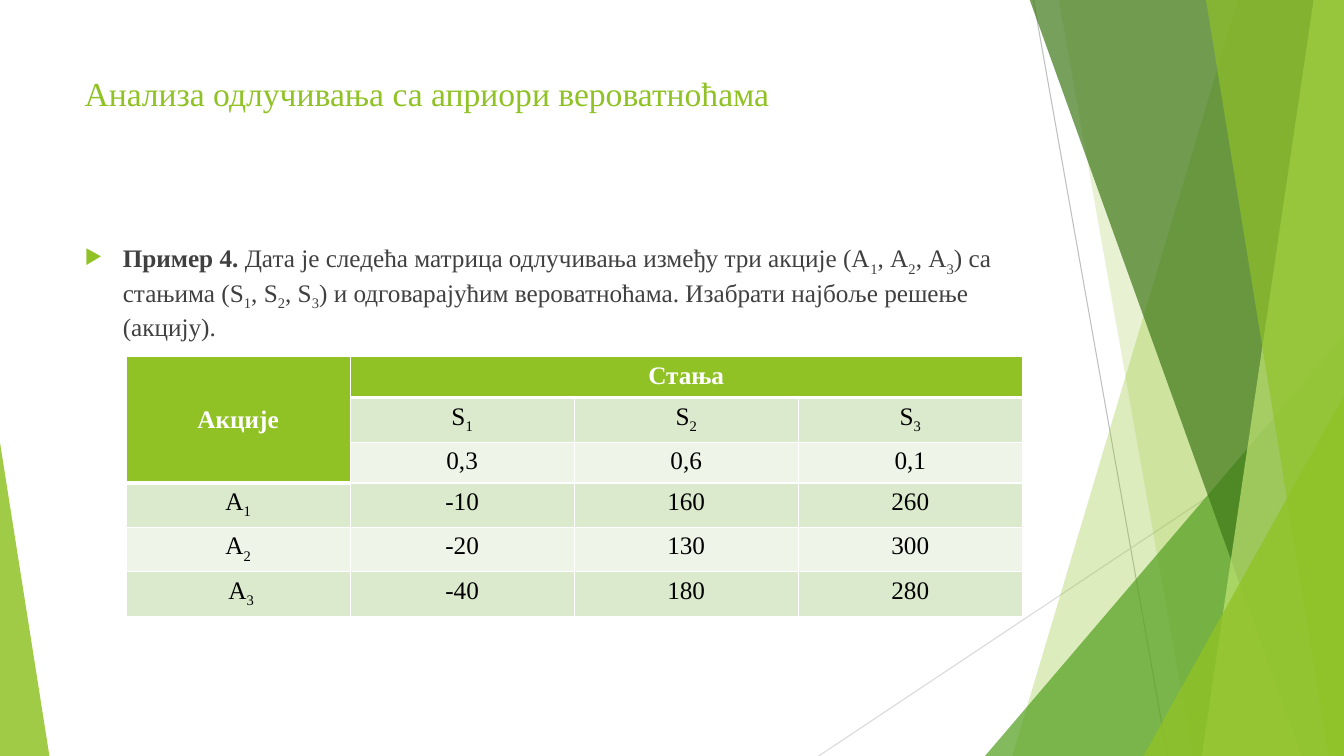
import lxml.etree
import pptx
import pptx.dml.color
import pptx.enum.shapes
import pptx.enum.text
import pptx.oxml
import pptx.oxml.ns
import pptx.util

Inches = pptx.util.Inches
Pt = pptx.util.Pt
qn = pptx.oxml.ns.qn

WIDTH, HEIGHT = 13.33, 7.5
COLORS = {
    "lime": "90C226", "leaf": "54A021", "forest": "3F7819", "pale": "C0E474",
    "light_band": "EEF4E8", "band": "DBE9CD", "body": "404040", "black": "000000",
    "white": "FFFFFF", "line": "BFBFBF", "faint_line": "D9D9D9",
}


def rgb(color):
    return pptx.dml.color.RGBColor.from_string(COLORS[color])


def add_child(parent, tag, **attributes):
    return lxml.etree.SubElement(parent, qn(tag), attributes)


class SlideBuilder:
    font_name = "Times New Roman"

    def __init__(self, slide):
        self.shapes = slide.shapes

    def thin_line(self, start, end, color):
        line = self.shapes.add_connector(
            pptx.enum.shapes.MSO_CONNECTOR.STRAIGHT, *map(Inches, start + end))
        line.line.color.rgb = rgb(color)
        line.line.width = Pt(0.75)
        add_child(line._element.spPr, "a:effectLst")

    def paint(self, shape, color, opacity):
        shape.shadow.inherit = False
        shape.fill.solid()
        shape.fill.fore_color.rgb = rgb(color)
        shape.line.fill.background()
        color_element = shape._element.spPr.find(qn("a:solidFill"))[0]
        add_child(color_element, "a:alpha", val=str(opacity * 1000))

    def slanted_band(self, top_left, bottom_left, color, opacity):
        """Fill from a slanted left edge to the right side of the slide."""
        corners = [(top_left, -0.01), (WIDTH, -0.01), (WIDTH, HEIGHT), (bottom_left, HEIGHT)]
        points = [(Inches(x), Inches(y)) for x, y in corners]
        builder = self.shapes.build_freeform(*points[0])
        builder.add_line_segments(points[1:], close=True)
        self.paint(builder.convert_to_shape(), color, opacity)

    def corner_triangle(self, left, width, height, apex, color, opacity):
        """Stand a triangle on the bottom edge; apex is 0 (left) or 1 (right)."""
        triangle = self.shapes.add_shape(
            pptx.enum.shapes.MSO_SHAPE.ISOSCELES_TRIANGLE,
            Inches(left), Inches(HEIGHT - height), Inches(width), Inches(height))
        triangle.adjustments[0] = apex
        self.paint(triangle, color, opacity)

    def style(self, paragraph, size, color, bold=False):
        paragraph.font.name = self.font_name
        paragraph.font.size = Pt(size)
        paragraph.font.bold = bold
        paragraph.font.color.rgb = rgb(color)

    def add_runs(self, paragraph, text):
        """Add runs; the character after each underscore becomes a subscript."""
        first, *rest = text.split("_")
        paragraph.add_run().text = first
        for part in rest:
            subscript = paragraph.add_run()
            subscript.text = part[0]
            subscript.font._element.set("baseline", "-25000")
            if part[1:]:
                paragraph.add_run().text = part[1:]

    def text_box(self, left, top, width, height):
        frame = self.shapes.add_textbox(*map(Inches, (left, top, width, height))).text_frame
        frame.word_wrap = True
        return frame.paragraphs[0]

    def title(self, text, *box):
        paragraph = self.text_box(*box)
        self.add_runs(paragraph, text)
        self.style(paragraph, 24, "lime")

    def bullet(self, lead, text, *box):
        paragraph = self.text_box(*box)
        paragraph.space_before = Pt(10)
        properties = paragraph._p.get_or_add_pPr()
        properties.set("marL", str(Inches(0.38)))
        properties.set("indent", str(Inches(-0.38)))
        add_child(add_child(properties, "a:buClr"), "a:srgbClr", val=COLORS["lime"])
        add_child(properties, "a:buSzPct", val="80000")
        add_child(properties, "a:buChar", char="▶")
        lead_run = paragraph.add_run()
        lead_run.text = lead
        lead_run.font.bold = True
        self.add_runs(paragraph, text)
        self.style(paragraph, 18, "body")

    def cell_borders(self, cell, top, bottom):
        properties = cell._tc.get_or_add_tcPr()
        for side, width in (("L", 1), ("R", 1), ("T", top), ("B", bottom)):
            border = add_child(properties, f"a:ln{side}", w=str(Pt(width)))
            add_child(add_child(border, "a:solidFill"), "a:srgbClr", val=COLORS["white"])

    def decision_table(self, rows, left, top, width, height):
        table = self.shapes.add_table(
            len(rows), len(rows[0]), *map(Inches, (left, top, width, height))).table
        for row, texts in enumerate(rows):
            for column, text in enumerate(texts):
                cell = table.cell(row, column)
                header_rows = 3 if column == 0 else 1
                is_header = row < header_rows
                self.cell_borders(cell, top=3 if row == header_rows else 1,
                                  bottom=3 if row == header_rows - 1 else 1)
                cell.fill.solid()
                band = "band" if row % 2 else "light_band"
                cell.fill.fore_color.rgb = rgb("lime" if is_header else band)
                paragraph = cell.text_frame.paragraphs[0]
                paragraph.alignment = pptx.enum.text.PP_ALIGN.CENTER
                if text:
                    self.add_runs(paragraph, text)
                self.style(paragraph, 18, "white" if is_header else "black", is_header)
        actions_header = table.cell(0, 0)
        actions_header.merge(table.cell(2, 0))
        actions_header.vertical_anchor = pptx.enum.text.MSO_ANCHOR.MIDDLE
        table.cell(0, 1).merge(table.cell(0, 3))


def main():
    presentation = pptx.Presentation()
    presentation.slide_width = Inches(WIDTH)
    presentation.slide_height = Inches(HEIGHT)
    page = SlideBuilder(presentation.slides.add_slide(presentation.slide_layouts[6]))

    page.thin_line((10.25, 0), (11.58, HEIGHT), "line")
    page.thin_line((WIDTH, 4.03), (8.12, HEIGHT), "faint_line")
    page.slanted_band(12.28, 10.04, "lime", 30)
    page.slanted_band(10.5, 11.83, "lime", 20)
    page.corner_triangle(9.77, 3.56, 4.17, 1, "leaf", 72)
    page.slanted_band(10.21, 12.91, "forest", 70)
    page.slanted_band(13.03, 11.92, "pale", 70)
    page.slanted_band(11.96, 13.18, "lime", 65)
    page.corner_triangle(11.34, 1.99, 3.57, 1, "lime", 80)
    page.corner_triangle(0, 0.49, 3.11, 0, "lime", 85)

    page.title("Анализа одлучивања са априори вероватноћама", 0.74, 0.67, 9.4, 1.44)
    page.bullet(
        "Пример 4.",
        " Дата је следећа матрица одлучивања између три акције (А_1, А_2, А_3) са "
        "стањима (S_1, S_2, S_3) и одговарајућим вероватноћама. "
        "Изабрати најбоље решење (акцију).",
        0.74, 2.36, 9.4, 4.24)
    page.decision_table([
        ["Акције", "Стања", "", ""],
        ["", "S_1", "S_2", "S_3"],
        ["", "0,3", "0,6", "0,1"],
        ["А_1", "-10", "160", "260"],
        ["А_2", "-20", "130", "300"],
        [" А_3", "-40", "180", "280"],
    ], 1.25, 3.54, 8.89, 2.43)
    presentation.save("out.pptx")


if __name__ == "__main__":
    main()
